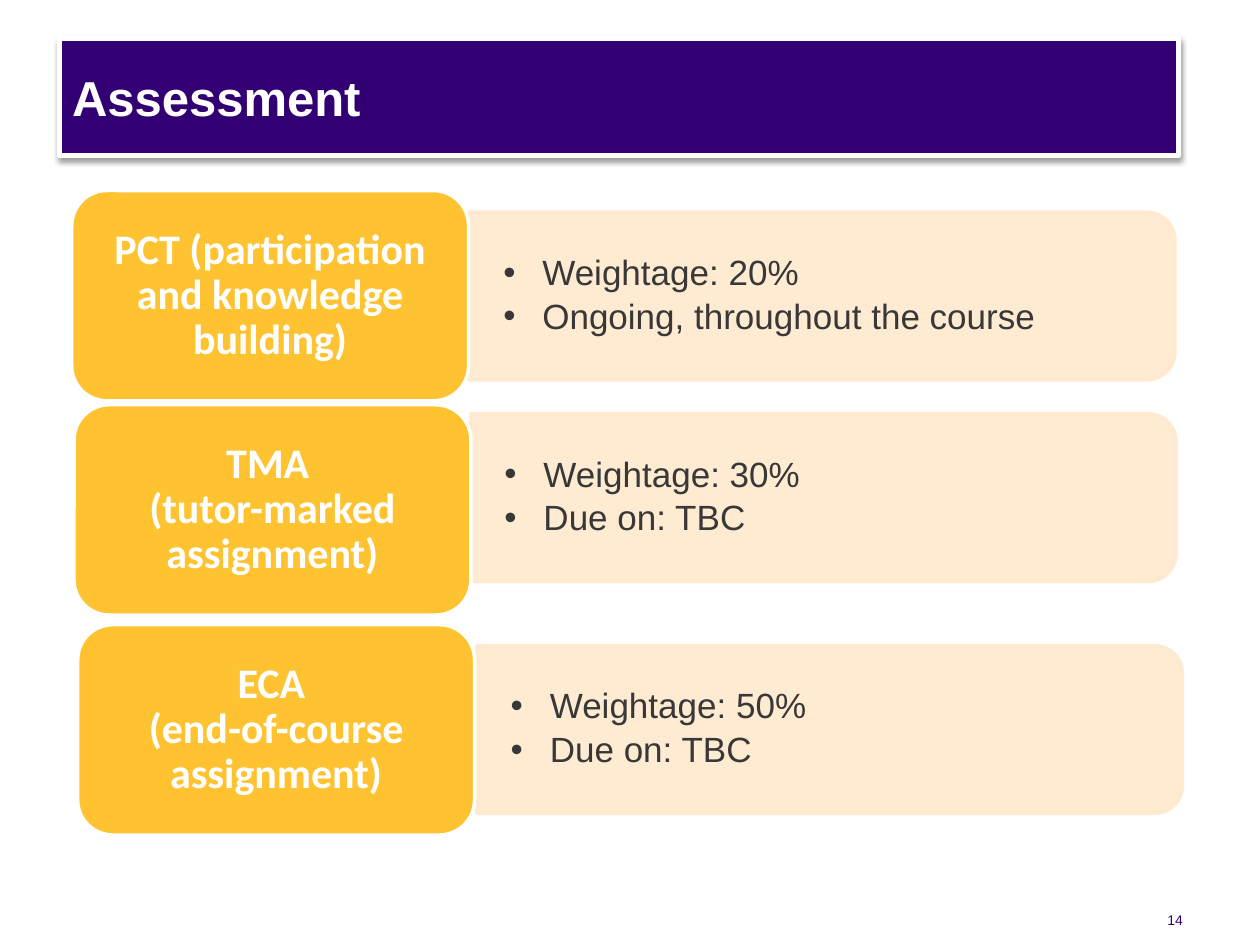
from lxml import etree
from pptx import Presentation
from pptx.dml.color import RGBColor
from pptx.enum.shapes import MSO_SHAPE
from pptx.enum.text import MSO_ANCHOR, MSO_AUTO_SIZE, PP_ALIGN
from pptx.oxml import parse_xml
from pptx.oxml.ns import nsdecls, qn
from pptx.util import Pt

LEFT, CENTER, RIGHT = PP_ALIGN.LEFT, PP_ALIGN.CENTER, PP_ALIGN.RIGHT
MIDDLE, BOTTOM = MSO_ANCHOR.MIDDLE, MSO_ANCHOR.BOTTOM
ROUNDED, ROUNDED_END = MSO_SHAPE.ROUNDED_RECTANGLE, MSO_SHAPE.ROUND_2_SAME_RECTANGLE
NO_FIT = MSO_AUTO_SIZE.NONE

PURPLE = RGBColor(0x32, 0x00, 0x73)
AMBER = RGBColor(0xFF, 0xC3, 0x32)
CREAM = RGBColor(0xFF, 0xE9, 0xCE)
WHITE = RGBColor(0xFF, 0xFF, 0xFF)
DARK = RGBColor(0x38, 0x38, 0x38)

LABEL_W, LABEL_H = 226.8, 120.2
DETAIL_W, DETAIL_H = 403.2, 95.8
BULLET_INDENT = 22.3

# label, label position, detail position, bullet lines
ASSESSMENTS = [
    ("PCT (participation and knowledge building)", (41, 108.9), (268.2, 121.3),
     ["Weightage: 20%", "Ongoing, throughout the course"]),
    ("TMA \v(tutor-marked assignment)", (42.3, 231.3), (268.9, 236.5),
     ["Weightage: 30%", "Due on: TBC"]),
    ("ECA \v(end-of-course assignment)", (44.4, 357), (272.5, 369),
     ["Weightage: 50%", "Due on: TBC"]),
]


def paint(sp, fill, line, width):
    sp.fill.solid()
    sp.fill.fore_color.rgb = fill
    sp.line.color.rgb = line
    sp.line.width = Pt(width)


def set_frame(tf, anchor, inset_x, inset_y):
    tf.word_wrap = True
    tf.auto_size = NO_FIT
    tf.vertical_anchor = anchor
    tf.margin_left = tf.margin_right = Pt(inset_x)
    tf.margin_top = tf.margin_bottom = Pt(inset_y)


def style(p, font, size, color, align=LEFT, bold=False):
    p.alignment = align
    for r in p.runs:
        r.font.name = font
        r.font.size = Pt(size)
        r.font.bold = bold
        r.font.color.rgb = color


def add_title(s, text, x, y, w, h):
    """Turn the title placeholder into a rounded banner with a soft shadow."""
    title = s.shapes.title
    title.left, title.top, title.width, title.height = Pt(x), Pt(y), Pt(w), Pt(h)
    spPr = title.element.spPr
    spPr.find(qn("a:xfrm")).addnext(parse_xml(
        f'<a:prstGeom {nsdecls("a")} prst="roundRect"><a:avLst/></a:prstGeom>'))
    paint(title, PURPLE, WHITE, 3)
    spPr.append(parse_xml(
        f'<a:effectLst {nsdecls("a")}>'
        '<a:outerShdw blurRad="39370" dist="20320" dir="5400000" rotWithShape="0">'
        '<a:srgbClr val="000000"><a:alpha val="38000"/></a:srgbClr>'
        '</a:outerShdw></a:effectLst>'))
    title.text_frame.text = text
    set_frame(title.text_frame, MIDDLE, 7.2, 3.6)
    style(title.text_frame.paragraphs[0], "Arial", 28, WHITE, bold=True)


def add_detail(s, lines, x, y, w, h):
    """Add a panel rounded on its right side, with bullets over it."""
    panel = s.shapes.add_shape(ROUNDED_END, Pt(x + (w - h) / 2), Pt(y + (h - w) / 2),
                               Pt(h), Pt(w))
    panel.rotation = 90
    panel.shadow.inherit = False
    paint(panel, CREAM, CREAM, 2)
    for color in panel.element.spPr.iter(qn("a:srgbClr")):
        etree.SubElement(color, qn("a:alpha"), val="90000")

    box = s.shapes.add_textbox(Pt(x), Pt(y + 4.7), Pt(w - 4.3), Pt(h - 9.4))
    tf = box.text_frame
    set_frame(tf, MIDDLE, 19.4, 10.1)
    tf.text = "\n".join(lines)
    for p in tf.paragraphs:
        pPr = p._p.get_or_add_pPr()
        pPr.set("marL", str(Pt(BULLET_INDENT)))
        pPr.set("indent", str(-Pt(BULLET_INDENT)))
        etree.SubElement(pPr, qn("a:buFont"), typeface="Arial")
        etree.SubElement(pPr, qn("a:buChar"), char="•")
        p.line_spacing = 0.9
        p.space_after = Pt(3.5)
        style(p, "Arial", 20, DARK)


def add_label(s, text, x, y, w, h):
    sp = s.shapes.add_shape(ROUNDED, Pt(x), Pt(y), Pt(w), Pt(h))
    sp.shadow.inherit = False
    paint(sp, AMBER, WHITE, 2)
    set_frame(sp.text_frame, MIDDLE, 8.6, 4.3)
    p = sp.text_frame.paragraphs[0]
    p.text = text
    p.line_spacing = 0.9
    style(p, "Calibri", 24, WHITE, CENTER, bold=True)


def add_page_number(s, number, x, y, w, h):
    tf = s.shapes.add_textbox(Pt(x), Pt(y), Pt(w), Pt(h)).text_frame
    set_frame(tf, BOTTOM, 0, 0)
    tf.text = number
    style(tf.paragraphs[0], "Arial", 8, PURPLE, RIGHT)


def main():
    prs = Presentation()
    prs.slide_width, prs.slide_height = Pt(720), Pt(540)
    s = prs.slides.add_slide(prs.slide_layouts[5])
    add_title(s, "Assessment", 34, 22, 639.4, 67)
    for label, label_pos, detail_pos, lines in ASSESSMENTS:
        add_detail(s, lines, *detail_pos, DETAIL_W, DETAIL_H)
        add_label(s, label, *label_pos, LABEL_W, LABEL_H)
    add_page_number(s, "14", 656, 511, 20, 19.5)
    prs.save("out.pptx")


if __name__ == "__main__":
    main()
